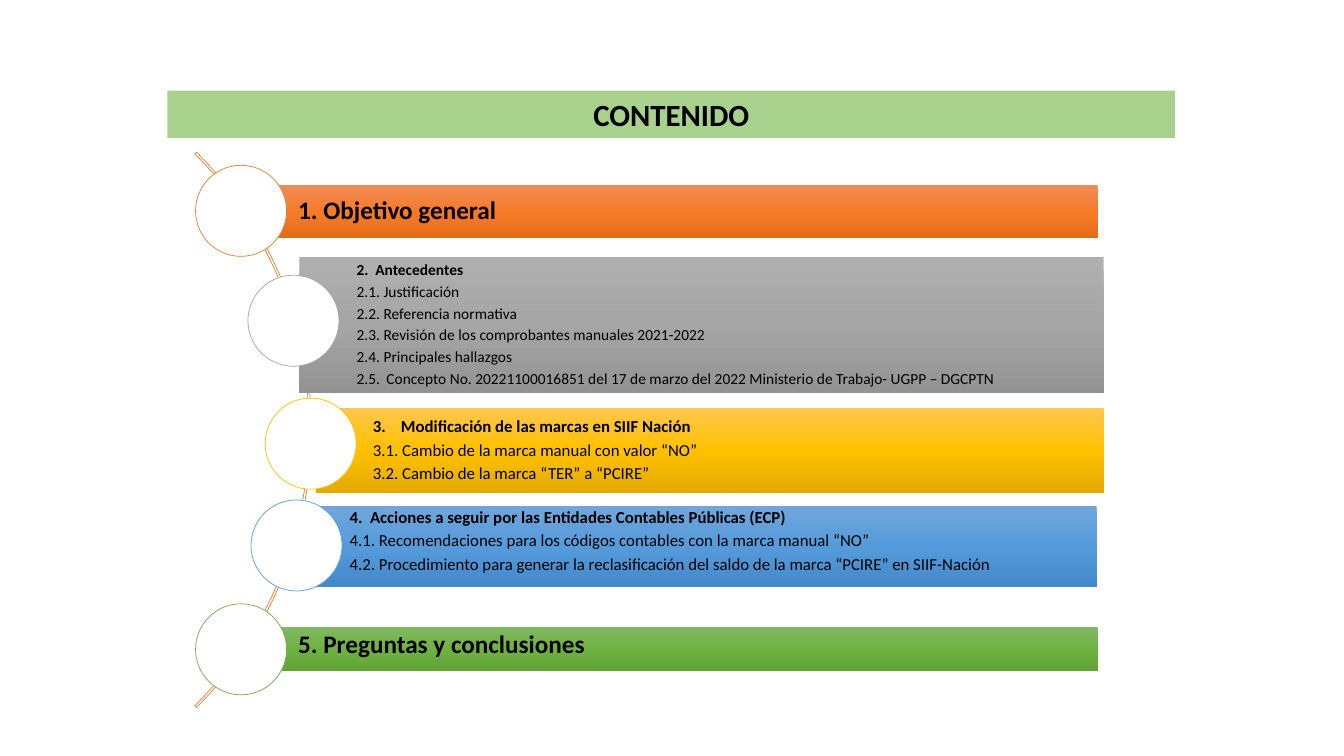
from copy import deepcopy

from lxml import etree
from pptx import Presentation
from pptx import util as u
from pptx.dml.color import RGBColor
from pptx.enum import shapes, text
from pptx.oxml.ns import qn

COLORS = {
    "ink": "000000", "paper": "FFFFFF", "title": "A9D18E",
    "orange": "ED7D31", "gray": "A5A5A5", "gold": "FFC000",
    "blue": "5B9BD5", "green": "70AD47",
}
# Top, middle and bottom of each bar's gradient
SHADES = {
    "orange": ("F18C57", "F67B28", "E56C19"),
    "gray": ("AFAFAF", "A5A5A5", "939393"),
    "gold": ("FFC64B", "FFC000", "E3AB00"),
    "blue": ("71A6DB", "559BDB", "448ACA"),
    "green": ("81B861", "6FB242", "62A336"),
}
DISC = 65
MID, TOP = text.MSO_ANCHOR.MIDDLE, text.MSO_ANCHOR.TOP


class Deck:
    font = "Calibri"
    kinds = shapes.MSO_SHAPE

    def __init__(self, slide):
        self.slide = slide

    def shape(self, kind, box, fill=None, line=None):
        item = self.slide.shapes.add_shape(kind, *[u.Pt(v) for v in box])
        item.shadow.inherit = False
        if fill:
            item.fill.solid()
            item.fill.fore_color.rgb = RGBColor.from_string(COLORS[fill])
        else:
            item.fill.background()
        if line:
            item.line.color.rgb = RGBColor.from_string(COLORS[line])
            item.line.width = u.Pt(0.5)
        else:
            item.line.fill.background()
        return item

    def shade(self, item, tones):
        item.fill.gradient()
        item.fill.gradient_angle = 270
        stops = item._element.spPr.find(qn("a:gradFill")).find(qn("a:gsLst"))
        stops.append(deepcopy(stops[0]))
        for stop, tone, place in zip(item.fill.gradient_stops, tones, (0, 0.5, 1)):
            stop.color.rgb = RGBColor.from_string(tone)
            stop.position = place

    def label(self, para, words, size, bold):
        run = para.add_run()
        run.text = words
        run.font.name = self.font
        run.font.size = u.Pt(size)
        run.font.bold = bold
        run.font.color.rgb = RGBColor.from_string(COLORS["ink"])

    def title(self, box, words):
        item = self.shape(self.kinds.RECTANGLE, box, "title")
        para = item.text_frame.paragraphs[0]
        para.alignment = text.PP_ALIGN.CENTER
        self.label(para, words, 22, True)

    def arc(self, box):
        item = self.shape(self.kinds.BLOCK_ARC, box, line="orange")
        for i, value in enumerate((189, 27, 0.003)):
            item.adjustments[i] = value

    def tab(self, para, place):
        tabs = etree.SubElement(para._p.get_or_add_pPr(), qn("a:tabLst"))
        etree.SubElement(tabs, qn("a:tab"), pos=str(u.Pt(place)), algn="l")

    def bar(self, box, color, lines, size, anchor, pad):
        item = self.shape(self.kinds.RECTANGLE, box)
        self.shade(item, SHADES[color])
        frame = item.text_frame
        frame.word_wrap = True
        frame.vertical_anchor = anchor
        frame.margin_left = u.Pt(41)
        frame.margin_top = frame.margin_right = frame.margin_bottom = u.Pt(pad)
        for i, (words, stop) in enumerate(lines):
            para = frame.add_paragraph() if i else frame.paragraphs[0]
            para.alignment = text.PP_ALIGN.LEFT
            para.line_spacing = 0.9
            if i < len(lines) - 1:
                para.space_after = u.Pt(size / 3)
            if stop:
                self.tab(para, stop)
            self.label(para, words, size, i == 0)

    def disc(self, x, y, color):
        self.shape(self.kinds.OVAL, (x, y, DISC, DISC), "paper", color)


# Each section: bar box, disc corner, color, text size, anchor, inset,
# and lines with the tab stop after their number
SECTIONS = [
    ((172, 132.5, 612, 37.5), (139.7, 118.1), "orange", 18, MID, 1,
     [("1. Objetivo general", 0)]),
    ((213.8, 183.6, 574.6, 97.2), (177.1, 196.6), "gray", 11, MID, 2,
     [("2.\tAntecedentes", 13.3),
      ("2.1. Justificación", 0),
      ("2.2. Referencia normativa", 0),
      ("2.3. Revisión de los comprobantes manuales 2021-2022", 0),
      ("2.4. Principales hallazgos", 0),
      ("2.5.\tConcepto No. 20221100016851 del 17 de marzo del 2022 "
       "Ministerio de Trabajo- UGPP – DGCPTN", 21.3)]),
    ((225.4, 291.6, 563, 60.5), (189.4, 284.4), "gold", 12, MID, 2,
     [("3.\tModificación de las marcas en SIIF Nación", 20),
      ("3.1. Cambio de la marca manual con valor “NO”", 0),
      ("3.2. Cambio de la marca “TER” a “PCIRE”", 0)]),
    ((208.8, 361.4, 574.6, 57.6), (179.3, 357.1), "blue", 12, TOP, 2,
     [("4.\tAcciones a seguir por las Entidades Contables Públicas (ECP)", 14.5),
      ("4.1. Recomendaciones para los códigos contables con la marca manual “NO”", 0),
      ("4.2. Procedimiento para generar la reclasificación del saldo "
       "de la marca “PCIRE” en SIIF-Nación", 0)]),
    ((172, 447.8, 612, 31.7), (139.7, 431.3), "green", 18, TOP, 3.6,
     [("5. Preguntas y conclusiones", 0)]),
]


def main():
    show = Presentation()
    show.slide_width, show.slide_height = u.Pt(960), u.Pt(540)
    deck = Deck(show.slides.add_slide(show.slide_layouts[6]))

    # Heading and the curve behind the sections
    deck.title((119.5, 64.8, 720, 33.8), "CONTENIDO")
    deck.arc((-338.4, 26.6, 560.9, 560.9))

    # Sections
    for box, corner, color, size, anchor, pad, lines in SECTIONS:
        deck.bar(box, color, lines, size, anchor, pad)
        deck.disc(*corner, color)

    show.save("out.pptx")


if __name__ == "__main__":
    main()
